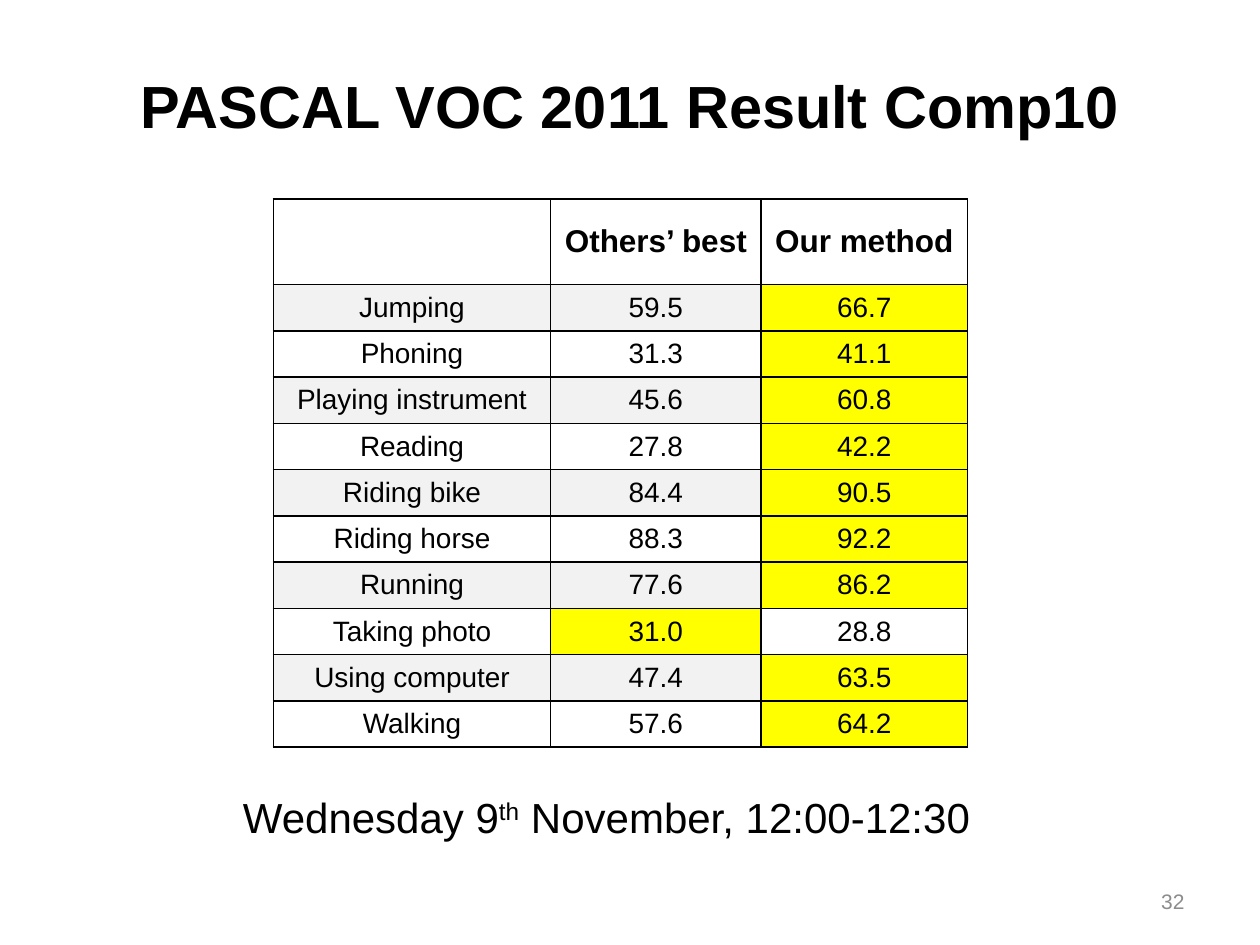
from lxml import etree
from pptx import Presentation
from pptx.dml.color import RGBColor
from pptx.enum.text import MSO_ANCHOR, PP_ALIGN
from pptx.oxml.ns import qn
from pptx.util import Inches, Pt

LEFT, CENTER, RIGHT = PP_ALIGN.LEFT, PP_ALIGN.CENTER, PP_ALIGN.RIGHT
TOP, MIDDLE = MSO_ANCHOR.TOP, MSO_ANCHOR.MIDDLE
BLACK, GRAY, WHITE = "000000", "8C8C8C", "FFFFFF"
BAND, WINNER = "F2F2F2", "FFFF00"
COLUMN_WIDTHS = (2.2, 1.67, 1.64)
HEADER_HEIGHT, ROW_HEIGHT = 0.68, 0.36
HEADERS = ("", "Others’ best", "Our method")
RESULTS = (
    ("Jumping", 59.5, 66.7),
    ("Phoning", 31.3, 41.1),
    ("Playing instrument", 45.6, 60.8),
    ("Reading", 27.8, 42.2),
    ("Riding bike", 84.4, 90.5),
    ("Riding horse", 88.3, 92.2),
    ("Running", 77.6, 86.2),
    ("Taking photo", 31.0, 28.8),
    ("Using computer", 47.4, 63.5),
    ("Walking", 57.6, 64.2),
)


def rgb(value):
    """Turn a hex string into a colour."""
    return RGBColor.from_string(value)


def style_font(font, size, color=BLACK, bold=False):
    """Set the face, size, colour and weight of a font."""
    font.name = "Arial"
    font.size = Pt(size)
    font.bold = bold
    font.color.rgb = rgb(color)


def add_text(page, bounds, spans, size, align=LEFT, anchor=TOP, color=BLACK, bold=False):
    """Add a one-paragraph text box and return its paragraph."""
    box = page.shapes.add_textbox(*map(Inches, bounds))
    frame = box.text_frame
    frame.word_wrap = True
    frame.vertical_anchor = anchor
    para = frame.paragraphs[0]
    para.alignment = align
    for text in spans:
        span = para.add_run()
        span.text = text
        style_font(span.font, size, color, bold)
    return para


def border_cell(cell, color=BLACK, width=1):
    """Draw a solid line on each side of a cell."""
    properties = cell._tc.get_or_add_tcPr()
    for side in ("a:lnL", "a:lnR", "a:lnT", "a:lnB"):
        line = etree.SubElement(properties, qn(side), w=str(Pt(width)))
        fill = etree.SubElement(line, qn("a:solidFill"))
        etree.SubElement(fill, qn("a:srgbClr"), val=color)


def fill_cell(cell, text, fill, size, bold=False):
    """Write centred text in a bordered cell with a plain fill."""
    border_cell(cell)
    cell.fill.solid()
    cell.fill.fore_color.rgb = rgb(fill)
    cell.vertical_anchor = MIDDLE
    cell.text_frame.text = text
    para = cell.text_frame.paragraphs[0]
    para.alignment = CENTER
    style_font(para.font, size, bold=bold)
    for span in para.runs:
        style_font(span.font, size, bold=bold)


def add_results(page):
    """Add the score table with the better score of each row highlighted."""
    heights = [HEADER_HEIGHT] + [ROW_HEIGHT] * len(RESULTS)
    table = page.shapes.add_table(
        len(heights), len(HEADERS), Inches(2.17), Inches(1.58),
        Inches(sum(COLUMN_WIDTHS)), Inches(sum(heights))).table
    for column, width in zip(table.columns, COLUMN_WIDTHS):
        column.width = Inches(width)
    for row, height in zip(table.rows, heights):
        row.height = Inches(height)
    for index, header in enumerate(HEADERS):
        fill_cell(table.cell(0, index), header, WHITE, 18, bold=True)
    for number, (action, *scores) in enumerate(RESULTS, 1):
        band = BAND if number % 2 else WHITE
        fill_cell(table.cell(number, 0), action, band, 16)
        for index, score in enumerate(scores, 1):
            fill = WINNER if score == max(scores) else band
            fill_cell(table.cell(number, index), f"{score:.1f}", fill, 16)


def main():
    """Build the results slide and save it."""
    deck = Presentation()
    deck.slide_width, deck.slide_height = Inches(10), Inches(7.5)
    page = deck.slides.add_slide(deck.slide_layouts[6])
    add_text(page, (7.17, 6.95, 2.33, 0.4), ["32"], 12, RIGHT, MIDDLE, GRAY)
    title = add_text(page, (0.75, 0.5, 8.5, 0.67),
                     ["PASCAL VOC 2011 Result Comp10"], 34, CENTER, bold=True)
    title.space_before = Pt(4)
    add_results(page)
    date = add_text(page, (1.83, 6.23, 6.17, 0.5),
                    ["Wednesday 9", "th", " November, 12:00-12:30"], 24)
    date.runs[1].font._element.set("baseline", "30000")
    deck.save("out.pptx")


if __name__ == "__main__":
    main()
